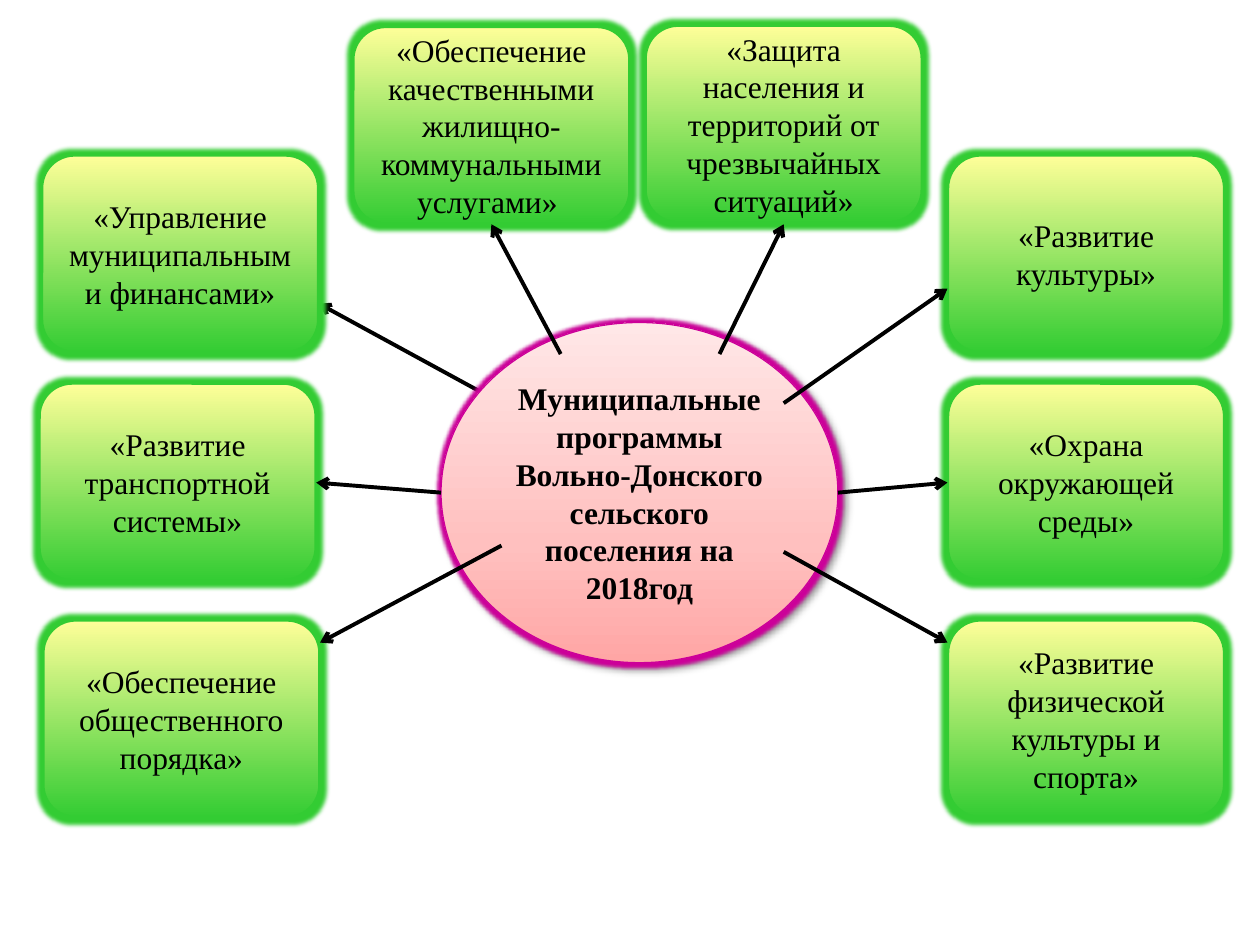
from lxml import etree
from pptx import Presentation
from pptx.dml.color import RGBColor
from pptx.enum.shapes import MSO_CONNECTOR, MSO_SHAPE
from pptx.enum.text import MSO_ANCHOR, PP_ALIGN
from pptx.oxml import parse_xml
from pptx.oxml.ns import nsdecls, qn
from pptx.util import Inches, Pt

ROUND_RECT, ELLIPSE = MSO_SHAPE.ROUNDED_RECTANGLE, MSO_SHAPE.OVAL
FONT = "Times New Roman"
BLACK, GREEN, YELLOW, MAGENTA = "000000", "33CC33", "FFFF99", "CC0099"
BOX_SIZE = (2.2, 1.57)
RIGHT, ROWS = 7.52, (1.23, 3.04, 4.92)

# left, top, text
PROGRAMS = [
    (2.8, 0.21, "«Обеспечение качественными жилищно-коммунальными услугами» "),
    (5.12, 0.2, "«Защита населения и территорий от чрезвычайных ситуаций»"),
    (RIGHT, ROWS[0], "«Развитие культуры»"),
    (0.33, ROWS[0], "«Управление муниципальными финансами»"),
    (0.31, ROWS[1], "«Развитие транспортной системы»"),
    (0.34, ROWS[2], "«Обеспечение общественного порядка»"),
    (RIGHT, ROWS[2], "«Развитие физической культуры и спорта»"),
    (RIGHT, ROWS[1], "«Охрана окружающей среды»"),
]
CENTRE = (3.5, 2.56, 3.15, 2.7)
CENTRE_TEXT = "Муниципальные программы Вольно-Донского сельского поселения на 2018год"

# start and end points
ARROW_BEHIND = (3.98, 3.2, 2.53, 2.41)
ARROWS = [
    (4.45, 2.81, 3.9, 1.78),
    (5.71, 2.81, 6.22, 1.78),
    (6.22, 3.2, 7.52, 2.29),
    (6.22, 4.38, 7.52, 5.1),
    (3.98, 4.33, 2.54, 5.1),
    (6.65, 3.91, 7.52, 3.83),
    (3.5, 3.91, 2.51, 3.83),
]
BOX_STOPS = [(0, GREEN), (100, YELLOW)]
CENTRE_STOPS = [(0, "FFA6A5"), (35, "FFC0BF"), (100, "FFE7E7")]
SHADOW = ('<a:outerShdw blurRad="50800" dist="38100" dir="2700000" algn="tl">'
          '<a:srgbClr val="000000"><a:alpha val="40000"/></a:srgbClr></a:outerShdw>')


def rgb(value):
    return RGBColor.from_string(value)


def gradient(stops):
    """Gradient that runs from the bottom of the shape to its top."""
    items = "".join(f'<a:gs pos="{pos * 1000}"><a:srgbClr val="{color}"/></a:gs>'
                    for pos, color in stops)
    return parse_xml(f'<a:gradFill {nsdecls("a")} rotWithShape="1"><a:gsLst>{items}</a:gsLst>'
                     '<a:lin ang="16200000" scaled="0"/></a:gradFill>')


def effects(color, radius, shadow):
    return parse_xml(f'<a:effectLst {nsdecls("a")}><a:glow rad="{Pt(radius)}">'
                     f'<a:srgbClr val="{color}"/></a:glow>{shadow}</a:effectLst>')


def add_label(slide, kind, at, text, stops, color, width, glow, bold=False, shadow=""):
    s = slide.shapes.add_shape(kind, *map(Inches, at))
    s.line.color.rgb = rgb(color)
    s.line.width = Pt(width)
    sp_pr = s.fill._xPr
    sp_pr.find(qn("a:ln")).addprevious(gradient(stops))
    sp_pr.append(effects(color, glow, shadow))
    tf = s.text_frame
    tf.word_wrap = True
    tf.vertical_anchor = MSO_ANCHOR.MIDDLE
    p = tf.paragraphs[0]
    p.text = text
    p.alignment = PP_ALIGN.CENTER
    p.font.name, p.font.size, p.font.bold = FONT, Pt(18), bold
    p.font.color.rgb = rgb(BLACK)


def add_arrow(slide, points):
    c = slide.shapes.add_connector(MSO_CONNECTOR.STRAIGHT, *map(Inches, points))
    c.line.color.rgb = rgb(BLACK)
    c.line.width = Pt(2.25)
    etree.SubElement(c.line._get_or_add_ln(), qn("a:tailEnd"), type="arrow")
    etree.SubElement(c._element.spPr, qn("a:effectLst"))


def main():
    prs = Presentation()
    prs.slide_width, prs.slide_height = Inches(10), Inches(7.5)
    slide = prs.slides.add_slide(prs.slide_layouts[6])
    add_arrow(slide, ARROW_BEHIND)
    for left, top, text in PROGRAMS:
        add_label(slide, ROUND_RECT, (left, top, *BOX_SIZE), text, BOX_STOPS, GREEN, 2, 5)
    add_label(slide, ELLIPSE, CENTRE, CENTRE_TEXT, CENTRE_STOPS, MAGENTA, 0.75, 4,
              bold=True, shadow=SHADOW)
    for points in ARROWS:
        add_arrow(slide, points)
    prs.save("out.pptx")


if __name__ == "__main__":
    main()
